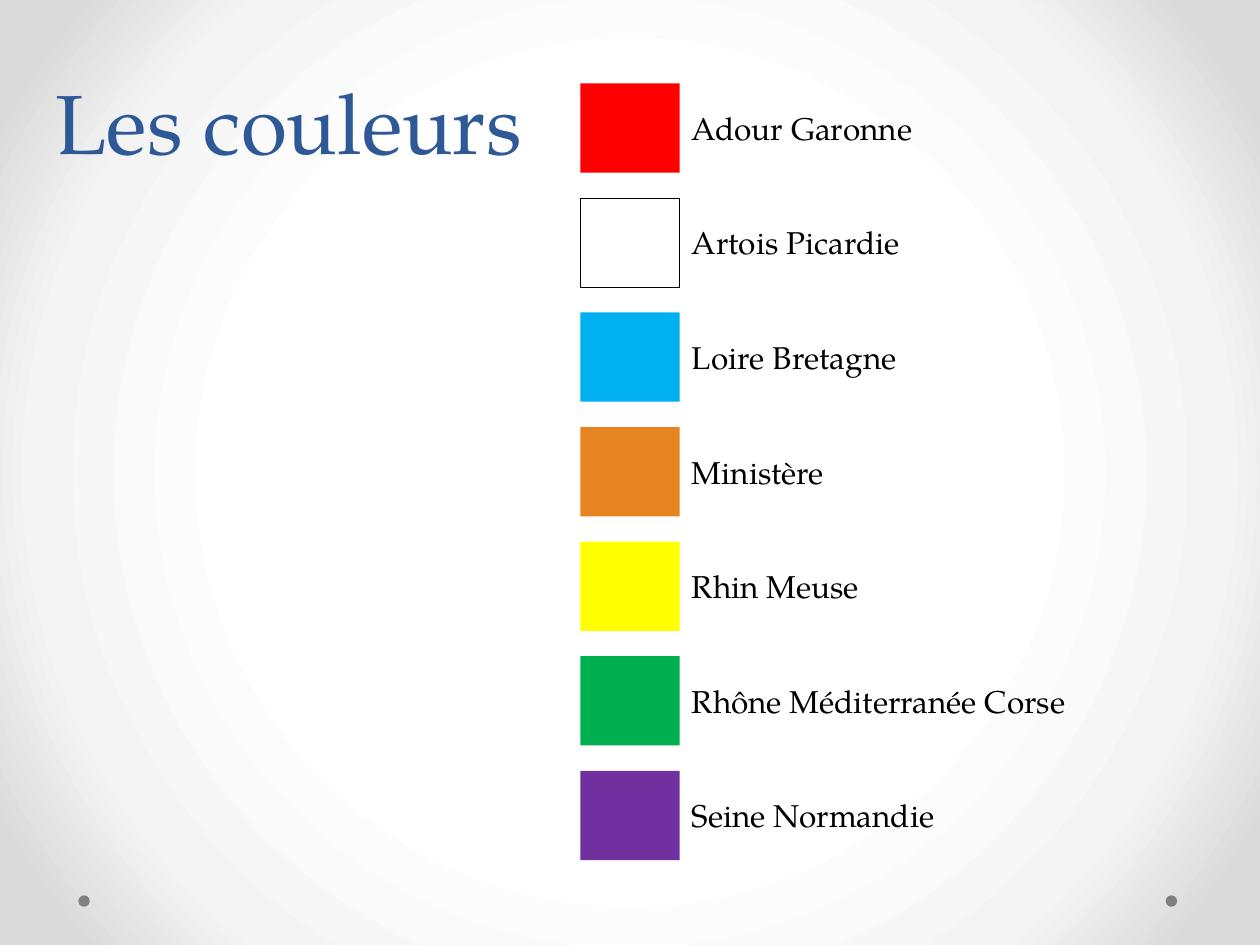
from lxml import etree
from pptx import Presentation
from pptx.dml.color import RGBColor
from pptx.enum import shapes, text
from pptx.oxml import ns
from pptx.util import Cm, Pt

FONT = "TeX Gyre Pagella"
BLACK = RGBColor(0x00, 0x00, 0x00)
WHITE = RGBColor(0xFF, 0xFF, 0xFF)
GREY = RGBColor(0x80, 0x80, 0x80)
NAVY = RGBColor(0x2F, 0x58, 0x97)
RED = RGBColor(0xFF, 0x00, 0x00)
SKY = RGBColor(0x00, 0xB0, 0xF0)
ORANGE = RGBColor(0xE6, 0x84, 0x22)
YELLOW = RGBColor(0xFF, 0xFF, 0x00)
GREEN = RGBColor(0x00, 0xB0, 0x50)
PURPLE = RGBColor(0x70, 0x30, 0xA0)
LIGHT_GREY = RGBColor(0xF4, 0xF4, 0xF4)
EDGE_GREY = RGBColor(0xDA, 0xDA, 0xDA)

BASINS = [
    ("Adour Garonne", RED),
    ("Artois Picardie", WHITE),
    ("Loire Bretagne", SKY),
    ("Ministère", ORANGE),
    ("Rhin Meuse", YELLOW),
    ("Rhône Méditerranée Corse", GREEN),
    ("Seine Normandie", PURPLE),
]


def add_filled(kind, left, top, width, height, color):
    """Add a preset shape with a plain fill, no line and no shadow."""
    shape = slide.shapes.add_shape(kind, Cm(left), Cm(top), Cm(width), Cm(height))
    shape.shadow.inherit = False
    shape.fill.solid()
    shape.fill.fore_color.rgb = color
    shape.line.fill.background()
    return shape


def style_run(paragraph, size, color):
    font = paragraph.runs[0].font
    font.name = FONT
    font.size = Pt(size)
    font.color.rgb = color


prs = Presentation()
prs.slide_width, prs.slide_height = Cm(25.4), Cm(19.05)
slide = prs.slides.add_slide(prs.slide_layouts[5])

# Radial background, white in the centre
backdrop = slide.background.fill
backdrop.gradient()
gradient = slide.background._cSld.find(".//" + ns.qn("a:gradFill"))
for child in list(gradient):
    gradient.remove(child)
stops = etree.SubElement(gradient, ns.qn("a:gsLst"))
for position, color in [(50, WHITE), (76, LIGHT_GREY), (92, EDGE_GREY)]:
    stop = etree.SubElement(stops, ns.qn("a:gs"), pos=str(position * 1000))
    etree.SubElement(stop, ns.qn("a:srgbClr"), val=str(color))
radial = etree.SubElement(gradient, ns.qn("a:path"), path="circle")
etree.SubElement(radial, ns.qn("a:fillToRect"), l="50000", t="50000", r="50000", b="50000")

# Corner dots
for left in (23.5, 1.58):
    add_filled(shapes.MSO_SHAPE.OVAL, left, 18.05, 0.23, 0.23, GREY)

# Title
title = slide.shapes.title
title.left, title.top, title.width, title.height = Cm(-0.1), Cm(0.92), Cm(11.84), Cm(2.67)
title.text_frame.text = "Les couleurs"
title.text_frame.auto_size = text.MSO_AUTO_SIZE.NONE
title.text_frame.vertical_anchor = text.MSO_ANCHOR.BOTTOM
heading = title.text_frame.paragraphs[0]
heading.alignment = text.PP_ALIGN.CENTER
heading.line_spacing = Pt(58)
style_run(heading, 48, NAVY)

# Legend: one swatch and one label per row
SWATCH_LEFT, SWATCH_WIDTH, SWATCH_HEIGHT = 11.7, 2, 1.8
LABEL_HEIGHT = 1.02
FIRST_TOP, PITCH = 1.68, 2.31

for row, (name, color) in enumerate(BASINS):
    top = FIRST_TOP + row * PITCH
    swatch = add_filled(shapes.MSO_SHAPE.RECTANGLE, SWATCH_LEFT, top,
                        SWATCH_WIDTH, SWATCH_HEIGHT, color)
    if color == WHITE:
        swatch.line.color.rgb = BLACK
        swatch.line.width = Pt(0.25)

    label = slide.shapes.add_textbox(
        Cm(SWATCH_LEFT + SWATCH_WIDTH), Cm(top + (SWATCH_HEIGHT - LABEL_HEIGHT) / 2),
        Cm(10 if len(name) > 20 else 7.4), Cm(LABEL_HEIGHT))
    label.text_frame.word_wrap = True
    label.text_frame.auto_size = text.MSO_AUTO_SIZE.SHAPE_TO_FIT_TEXT
    label.text_frame.text = name
    style_run(label.text_frame.paragraphs[0], 18, BLACK)

prs.save("out.pptx")
